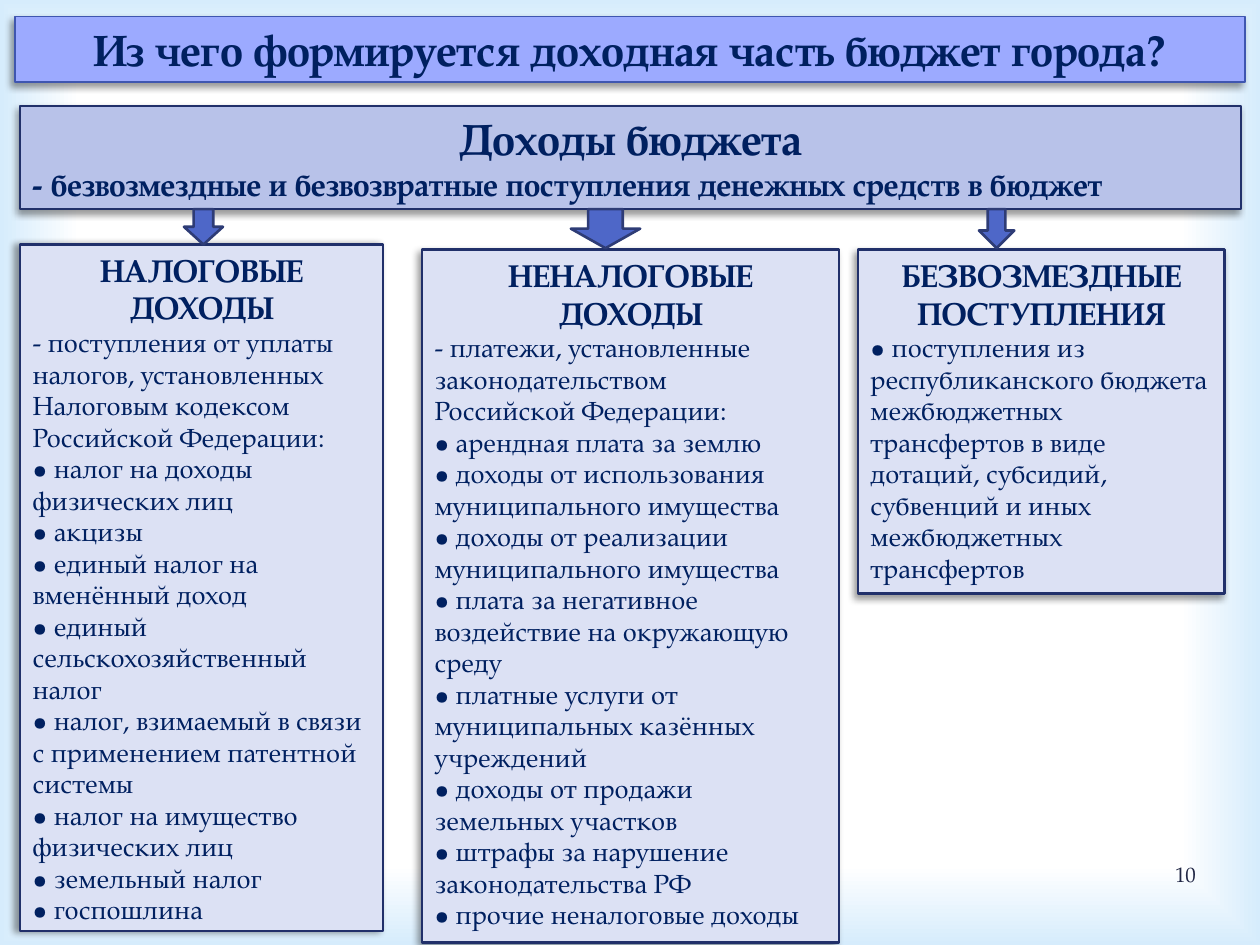
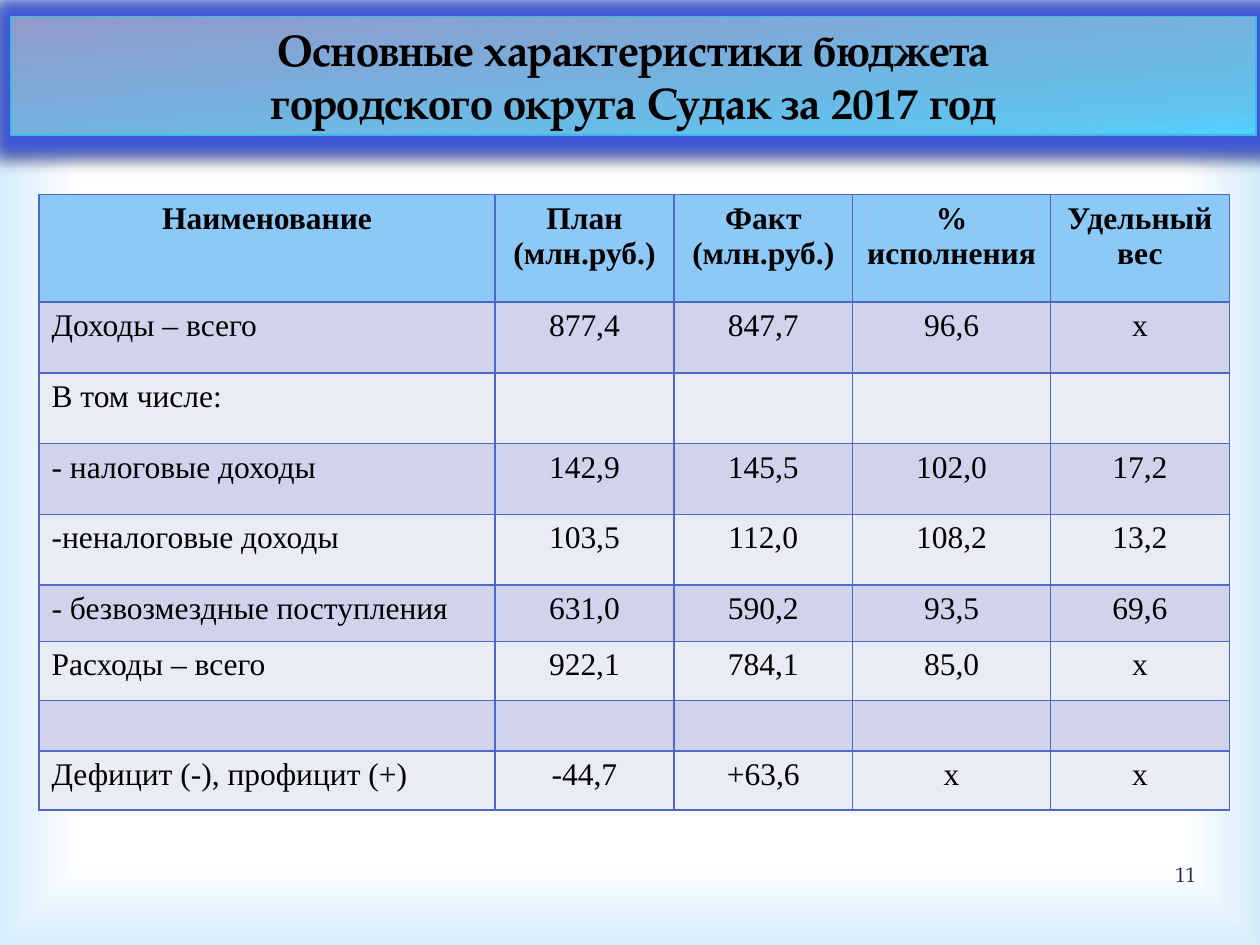
import pptx
import pptx.util
import pptx.dml.color
import pptx.enum.shapes
import pptx.enum.text
import pptx.oxml
import pptx.oxml.ns

Pt = pptx.util.Pt
qn = pptx.oxml.ns.qn
align = pptx.enum.text.PP_ALIGN
anchor = pptx.enum.text.MSO_ANCHOR
preset = pptx.enum.shapes.MSO_SHAPE
color = {name: pptx.dml.color.RGBColor.from_string(value) for name, value in {
    "navy": "002060", "black": "000000", "number": "212745",
    "title fill": "9CAAFF", "title line": "3F56B0", "title edge": "3EB9E4",
    "header": "B8C2E9", "panel": "DCE1F4", "panel line": "21306A",
    "arrow": "4E67C8", "arrow line": "2E3C76",
    "table head": "8CC9F7", "odd row": "D0D3EB", "even row": "E9EBF5",
}.items()}
serif = "TeX Gyre Pagella"
table_font = "Times New Roman"
namespace = pptx.oxml.ns.nsdecls("a")


def style_box(shape, box, fill, line, line_width, effects=""):
    """Place a shape and give it a fill, an outline and effects."""
    shape.left, shape.top, shape.width, shape.height = [Pt(value) for value in box]
    shape.fill.solid()
    shape.fill.fore_color.rgb = color[fill]
    shape.line.color.rgb = color[line]
    shape.line.width = Pt(line_width)
    shape.shadow.inherit = False
    if effects:
        effect_list = shape.element.spPr.find(qn("a:effectLst"))
        new_list = pptx.oxml.parse_xml(f"<a:effectLst {namespace}>{effects}</a:effectLst>")
        effect_list.getparent().replace(effect_list, new_list)


def set_gradient(parent, stops, direction):
    """Turn the solid fill of an element into a gradient."""
    stop_xml = "".join(f'<a:gs pos="{place * 1000}"><a:srgbClr val="{value}"/></a:gs>'
                       for place, value in stops)
    gradient = pptx.oxml.parse_xml(
        f'<a:gradFill {namespace} rotWithShape="1"><a:gsLst>{stop_xml}</a:gsLst>{direction}</a:gradFill>')
    parent.replace(parent.find(qn("a:solidFill")), gradient)


shadow_xml = ('<a:outerShdw blurRad="50800" dist="{distance}" dir="{angle}" algn="tl" rotWithShape="0">'
              '<a:srgbClr val="000000"><a:alpha val="{alpha}"/></a:srgbClr></a:outerShdw>')
shadow_diagonal = shadow_xml.format(distance=38100, angle=8100000, alpha=40000)
shadow_left = shadow_xml.format(distance=38100, angle=10800000, alpha=40000)
shadow_down = shadow_xml.format(distance=25400, angle=5400000, alpha=46000)
glow = '<a:glow rad="228600"><a:srgbClr val="3D58D8"/></a:glow>'

presentation = pptx.Presentation()
presentation.slide_width = Pt(720)
presentation.slide_height = Pt(540)

# Shared background: white with pale blue edges
master = presentation.slide_master
master.background.fill.solid()
set_gradient(master.element.find(".//" + qn("p:bgPr")),
             [(0, "FFFFFF"), (83, "FFFFFF"), (100, "D6ECFC")],
             '<a:path path="rect"><a:fillToRect l="50000" t="50000" r="50000" b="50000"/></a:path>')

# Shared parts: title band and page number
title_bands = [
    (10, "Из чего формируется доходная часть бюджет города?", (8.6, 9.4, 702.7, 37.4),
     "title line", "navy", shadow_diagonal),
    (11, "Основные характеристики бюджета\nгородского округа Судак за 2017 год", (6.5, 9.4, 711.4, 67.7),
     "title edge", "black", glow + shadow_down),
]
slides = []
for number, text, box, line, text_color, effects in title_bands:
    slide = presentation.slides.add_slide(presentation.slide_layouts[5])
    slides.append(slide)
    title = slide.shapes.title
    style_box(title, box, "title fill", line, 1, effects)
    title.text_frame.text = text
    title.text_frame.auto_size = pptx.enum.text.MSO_AUTO_SIZE.NONE
    title.text_frame.vertical_anchor = anchor.TOP
    for paragraph in title.text_frame.paragraphs:
        paragraph.alignment = align.CENTER
        paragraph.font.size = Pt(25)
        paragraph.font.name = serif
        paragraph.font.bold = True
        paragraph.font.color.rgb = color[text_color]

    page_number = slide.shapes.add_textbox(Pt(522.7), Pt(485.3), Pt(167.8), Pt(28.8))
    page_number.text_frame.word_wrap = True
    page_number.text_frame.vertical_anchor = anchor.MIDDLE
    paragraph = page_number.text_frame.paragraphs[0]
    paragraph.text = str(number)
    paragraph.alignment = align.RIGHT
    paragraph.font.size = Pt(12)
    paragraph.font.name = serif
    paragraph.font.color.rgb = color["number"]

income_slide, table_slide = slides

# Income slide: header and three panels (heading lines, then body lines)
panels = [
    ((11.5, 60.5, 697.7, 59), "header", shadow_diagonal, 25, 18, ["Доходы бюджета"],
     ["- безвозмездные и безвозвратные поступления денежных средств в бюджет"]),
    ((11.5, 139.7, 207.4, 392.4), "panel", shadow_left, 18, 15, ["НАЛОГОВЫЕ ДОХОДЫ"],
     ["- поступления от уплаты",
      "налогов, установленных",
      "Налоговым кодексом",
      "Российской Федерации:",
      "• налог на доходы физических лиц",
      "• акцизы",
      "• единый налог на вменённый доход",
      "• единый",
      "сельскохозяйственный налог",
      "• налог, взимаемый в связи с применением патентной",
      "системы",
      "• налог на имущество",
      "физических лиц",
      "• земельный налог",
      "• госпошлина"]),
    ((241.2, 142.6, 238.3, 396), "panel", shadow_diagonal, 18, 15, ["НЕНАЛОГОВЫЕ ДОХОДЫ"],
     ["- платежи, установленные",
      "законодательством",
      "Российской Федерации:",
      "• арендная плата за землю",
      "• доходы от использования",
      "муниципального имущества",
      "• доходы от реализации",
      "муниципального имущества",
      "• плата за негативное",
      "воздействие на окружающую среду",
      "• платные услуги от",
      "муниципальных казённых",
      "учреждений",
      "• доходы от продажи",
      "земельных участков",
      "• штрафы за нарушение",
      "законодательства РФ",
      "• прочие неналоговые доходы"]),
    ((490.3, 142.6, 209.5, 196.6), "panel", shadow_diagonal, 18, 15, ["БЕЗВОЗМЕЗДНЫЕ", "ПОСТУПЛЕНИЯ"],
     ["• поступления из республиканского бюджета межбюджетных трансфертов в виде дотаций, "
      "субсидий, субвенций и иных межбюджетных трансфертов"]),
]
for box, fill, effects, heading_size, body_size, heading, body in panels:
    shape = income_slide.shapes.add_shape(preset.RECTANGLE, 0, 0, 0, 0)
    style_box(shape, box, fill, "panel line", 1.5, effects)
    shape.text_frame.word_wrap = True
    shape.text_frame.vertical_anchor = anchor.TOP
    shape.text_frame.text = "\n".join(heading + body)
    for index, paragraph in enumerate(shape.text_frame.paragraphs):
        is_heading = index < len(heading)
        paragraph.alignment = align.CENTER if is_heading else align.LEFT
        paragraph.font.size = Pt(heading_size if is_heading else body_size)
        paragraph.font.name = serif
        paragraph.font.bold = is_heading or fill == "header"
        paragraph.font.color.rgb = color["navy"]

# Arrows from the header to the panels
for left, width, height in [(105.1, 22.3, 20.2), (326.2, 39.6, 22.3), (559.4, 20.2, 22.3)]:
    arrow = income_slide.shapes.add_shape(preset.DOWN_ARROW, 0, 0, 0, 0)
    style_box(arrow, (left, 119.5, width, height), "arrow", "arrow line", 1.5)

# Table slide: gradient of the title band
set_gradient(table_slide.shapes.title.element.spPr,
             [(0, "919ACA"), (85, "61C2ED"), (100, "52D2FF")],
             '<a:lin ang="5100000" scaled="0"/>')

# Budget table
rows = [
    ["Наименование", "План (млн.руб.)", "Факт (млн.руб.)", "% исполнения", "Удельный вес"],
    ["Доходы – всего", "877,4", "847,7", "96,6", "х"],
    ["В том числе:", "", "", "", ""],
    ["- налоговые доходы", "142,9", "145,5", "102,0", "17,2"],
    ["-неналоговые доходы", "103,5", "112,0", "108,2", "13,2"],
    ["- безвозмездные поступления", "631,0", "590,2", "93,5", "69,6"],
    ["Расходы – всего", "922,1", "784,1", "85,0", "х"],
    ["", "", "", "", ""],
    ["Дефицит (-), профицит (+)", "-44,7", "+63,6", "х", "х"],
]
column_widths = [260.6, 102.2, 102.2, 113, 102.2]
row_heights = [61.4, 40.4, 40.4, 40.4, 40.4, 32.2, 34, 28.6, 33.5]
table = table_slide.shapes.add_table(
    len(rows), len(column_widths), Pt(22.3), Pt(111.3), Pt(sum(column_widths)), Pt(sum(row_heights))).table
table.first_row = False
table.horz_banding = False
for column, width in zip(table.columns, column_widths):
    column.width = Pt(width)
for row, height in zip(table.rows, row_heights):
    row.height = Pt(height)

for row_index, row in enumerate(rows):
    row_fill = "table head" if row_index == 0 else ("odd row" if row_index % 2 else "even row")
    for column_index, text in enumerate(row):
        cell = table.cell(row_index, column_index)
        cell_properties = cell._tc.get_or_add_tcPr()
        for side in ("lnL", "lnR", "lnT", "lnB"):
            cell_properties.append(pptx.oxml.parse_xml(
                f'<a:{side} {namespace} w="12700"><a:solidFill>'
                f'<a:srgbClr val="{color["arrow"]}"/></a:solidFill></a:{side}>'))
        cell.fill.solid()
        cell.fill.fore_color.rgb = color[row_fill]
        paragraph = cell.text_frame.paragraphs[0]
        paragraph.text = text
        paragraph.alignment = align.CENTER if row_index == 0 or column_index else align.LEFT
        paragraph.font.size = Pt(18)
        paragraph.font.name = table_font
        paragraph.font.bold = row_index == 0
        paragraph.font.color.rgb = color["black"]

presentation.save("out.pptx")
